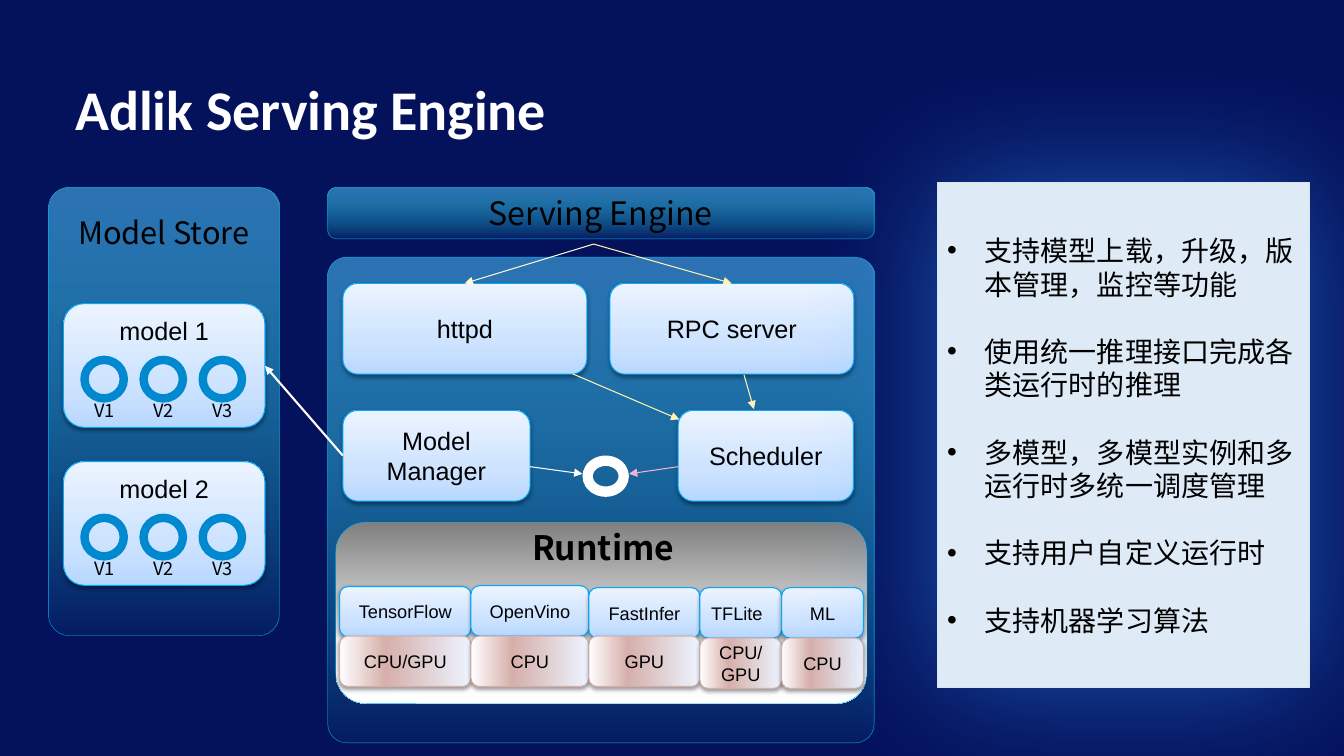
from lxml.etree import SubElement
from pptx import Presentation
from pptx.dml.color import RGBColor
from pptx.enum.shapes import MSO_CONNECTOR, MSO_SHAPE
from pptx.enum.text import MSO_ANCHOR, PP_ALIGN
from pptx.oxml.ns import qn
from pptx.util import Cm, Pt

NAVY = RGBColor(0x04, 0x11, 0x5B)
WHITE = RGBColor(0xFF, 0xFF, 0xFF)
BLACK = RGBColor(0x00, 0x00, 0x00)
GREY = RGBColor(0x80, 0x80, 0x80)
PALE_GREY = RGBColor(0xF2, 0xF2, 0xF2)
BLUE = RGBColor(0x2E, 0x75, 0xB6)
CYAN = RGBColor(0x21, 0xDF, 0xE9)
EDGE_CYAN = RGBColor(0x00, 0xB0, 0xF0)
EDGE_BLUE = RGBColor(0x04, 0xA7, 0xFA)
RING_BLUE = RGBColor(0x00, 0x89, 0xCF)
SKY = RGBColor(0xB8, 0xD8, 0xFF)
LIGHT_SKY = RGBColor(0xCD, 0xE3, 0xFF)
ICE = RGBColor(0xEC, 0xF4, 0xFF)
ROSE = RGBColor(0xD6, 0xAF, 0xAA)
PANEL = RGBColor(0xDE, 0xEB, 0xF7)
PANEL_EDGE = RGBColor(0xDA, 0xE3, 0xF3)
GLOW = RGBColor(0x33, 0x97, 0xFF)
CREAM = RGBColor(0xFF, 0xF8, 0xD9)
YELLOW = RGBColor(0xFF, 0xF2, 0xB3)
PINK = RGBColor(0xF8, 0xB1, 0xD0)

# Gradient stops: position, colour, opacity in percent
FRAME = {"stops": [(0, BLUE, 100), (100, CYAN, 5)], "angle": 270,
         "edge": EDGE_CYAN, "weight": 0.25, "shadow": False}
CARD = {"stops": [(0, SKY, 100), (35, LIGHT_SKY, 100), (100, ICE, 100)], "angle": 90,
        "edge": EDGE_BLUE, "weight": 0.75, "shadow": True}
DEVICE = {"stops": [(0, WHITE, 100), (35, ROSE, 100), (100, ICE, 100)], "angle": 0,
          "edge": ROSE, "weight": 0.75, "shadow": True}
RUNTIME = {"stops": [(0, GREY, 100), (68, PALE_GREY, 100), (100, WHITE, 100)], "angle": 270,
           "edge": EDGE_CYAN, "weight": 0.25, "shadow": False}

HEADING = {"name": "Noto Sans CJK SC", "size": Pt(22)}
BAR_TITLE = {"name": "Noto Sans CJK SC", "size": Pt(23)}
RUNTIME_TITLE = {"name": "Noto Sans CJK SC", "size": Pt(24), "bold": True}
VERSION = {"name": "Noto Sans CJK SC", "size": Pt(13)}
BULLET = {"name": "Noto Sans CJK SC", "size": Pt(20)}
LABEL = {"name": "Arial", "size": Pt(18)}
SMALL = {"name": "Arial", "size": Pt(13)}
TITLE = {"name": "Calibri", "size": Pt(40), "bold": True}

presentation = Presentation()
presentation.slide_width, presentation.slide_height = Cm(33.87), Cm(19.05)
slide = presentation.slides.add_slide(presentation.slide_layouts[6])
slide.background.fill.solid()
slide.background.fill.fore_color.rgb = NAVY


def write(shape, lines, font_format, align=PP_ALIGN.CENTER, color=BLACK,
          anchor=MSO_ANCHOR.MIDDLE, margins=(0.13, 0, 0.13, 0)):
    frame = shape.text_frame
    sides = ("margin_left", "margin_top", "margin_right", "margin_bottom")
    for side, margin in zip(sides, margins):
        setattr(frame, side, Cm(margin))
    frame.word_wrap = True
    frame.vertical_anchor = anchor
    for index, line in enumerate(lines):
        paragraph = frame.add_paragraph() if index else frame.paragraphs[0]
        paragraph.alignment = align
        run = paragraph.add_run()
        run.text = line
        run.font.color.rgb = color
        for name, value in font_format.items():
            setattr(run.font, name, value)
        SubElement(run.font._element, qn("a:ea"), typeface=font_format["name"])


def add_box(left, top, width, height, look, corner=0.167):
    shape = slide.shapes.add_shape(MSO_SHAPE.ROUNDED_RECTANGLE,
                                   Cm(left), Cm(top), Cm(width), Cm(height))
    shape.adjustments[0] = corner
    shape.fill.gradient()
    shape.fill.gradient_angle = look["angle"]
    stop_list = shape.element.spPr.find(".//" + qn("a:gsLst"))
    for stop in list(stop_list):
        stop_list.remove(stop)
    for position, color, opacity in look["stops"]:
        stop = SubElement(stop_list, qn("a:gs"), pos=str(position * 1000))
        rgb = SubElement(stop, qn("a:srgbClr"), val=str(color))
        SubElement(rgb, qn("a:alpha"), val=str(opacity * 1000))
    shape.line.color.rgb = look["edge"]
    shape.line.width = Pt(look["weight"])
    shape.shadow.inherit = False
    if look["shadow"]:
        effects = shape.element.spPr.find(qn("a:effectLst"))
        shadow = SubElement(effects, qn("a:outerShdw"), blurRad=str(Pt(3)),
                            dist=str(Pt(1.6)), dir="5400000", rotWithShape="0")
        rgb = SubElement(shadow, qn("a:srgbClr"), val=str(BLACK))
        SubElement(rgb, qn("a:alpha"), val="38000")
    return shape


# Title
title = slide.shapes.add_textbox(Cm(1.65), Cm(1.75), Cm(28.75), Cm(1.96))
write(title, ["Adlik Serving Engine"], TITLE, PP_ALIGN.LEFT, WHITE,
      MSO_ANCHOR.TOP, (0.25, 0.13, 0.25, 0.13))

# Model store, engine body and engine bar
store = add_box(1.22, 4.72, 5.82, 11.3, FRAME, 0.091)
write(store, ["Model Store"], HEADING, anchor=MSO_ANCHOR.TOP, margins=(0.13, 0.51, 0.13, 0))
add_box(8.26, 6.48, 13.77, 12.24, FRAME, 0.039)
write(add_box(8.26, 4.72, 13.77, 1.3, FRAME), ["Serving Engine"], BAR_TITLE)

# Engine components
for text, left, top, width in [("httpd", 8.64, 7.14, 6.15), ("RPC server", 15.37, 7.14, 6.15),
                               ("Model Manager", 8.64, 10.34, 4.72),
                               ("Scheduler", 17.09, 10.34, 4.42)]:
    write(add_box(left, top, width, 2.29, CARD), [text], LABEL, margins=(0.3, 0, 0.3, 0))

# Runtime block: each backend above the devices it runs on
add_box(8.46, 13.16, 13.39, 4.57, RUNTIME)
runtime_title = slide.shapes.add_textbox(Cm(13.28), Cm(13.16), Cm(4.34), Cm(1.4))
write(runtime_title, ["Runtime"], RUNTIME_TITLE, PP_ALIGN.LEFT,
      anchor=MSO_ANCHOR.TOP, margins=(0.13, 0.13, 0.13, 0.13))
left = 8.56
for backend, devices, width, top, device_top, right_margin in [
        ("TensorFlow", ["CPU/GPU"], 3.31, 14.78, 16.03, 0.13),
        ("OpenVino", ["CPU"], 2.97, 14.76, 16.03, 0.13),
        ("FastInfer", ["GPU"], 2.8, 14.81, 16.03, 0.13),
        ("TFLite", ["CPU/", "GPU"], 2.06, 14.81, 16.08, 0.33),
        ("ML", ["CPU"], 2.06, 14.81, 16.08, 0.13)]:
    write(add_box(left, top, width, 1.27, CARD), [backend], SMALL,
          margins=(0.13, 0, right_margin, 0))
    write(add_box(left, device_top, width, 1.27, DEVICE), devices, SMALL)
    left += width

# Models with their versions
for model in range(2):
    top = 7.65 + model * 3.98
    write(add_box(1.6, top, 5.08, 3.12, CARD), [f"model {model + 1}"], LABEL,
          anchor=MSO_ANCHOR.TOP, margins=(0.13, 0.15, 0.13, 0))
    for version in range(3):
        shift = version * 1.49
        ring = slide.shapes.add_shape(MSO_SHAPE.OVAL, Cm(2.13 + shift), Cm(top + 1.42),
                                      Cm(0.99), Cm(0.97))
        ring.fill.background()
        ring.line.color.rgb = RING_BLUE
        ring.line.width = Pt(6)
        ring.shadow.inherit = False
        label = slide.shapes.add_textbox(Cm(2.24 + shift), Cm(top + 2.29), Cm(0.91), Cm(0.89))
        write(label, [f"V{version + 1}"], VERSION, PP_ALIGN.LEFT,
              anchor=MSO_ANCHOR.TOP, margins=(0.13, 0.13, 0.13, 0.13))

# Shared ring between manager and scheduler
hub = slide.shapes.add_shape(MSO_SHAPE.DONUT, Cm(14.68), Cm(11.48), Cm(1.17), Cm(1.04))
hub.adjustments[0] = 0.25
hub.fill.solid()
hub.fill.fore_color.rgb = WHITE
hub.line.fill.background()
hub.shadow.inherit = False

# Arrows
for x1, y1, x2, y2, color, weight in [
        (8.64, 11.48, 6.68, 9.22, WHITE, 1.5), (14.96, 6.15, 11.71, 7.14, CREAM, 0.75),
        (14.96, 6.15, 18.44, 7.14, YELLOW, 0.75), (14.43, 9.42, 17.12, 10.57, YELLOW, 0.75),
        (18.75, 9.45, 19, 10.31, YELLOW, 0.75), (13.36, 11.76, 14.68, 11.94, WHITE, 0.75),
        (17.09, 11.76, 15.85, 11.94, PINK, 0.75)]:
    arrow = slide.shapes.add_connector(MSO_CONNECTOR.STRAIGHT, Cm(x1), Cm(y1), Cm(x2), Cm(y2))
    arrow.line.color.rgb = color
    arrow.line.width = Pt(weight)
    SubElement(arrow.line._get_or_add_ln(), qn("a:tailEnd"), type="triangle")
    SubElement(arrow.element.spPr, qn("a:effectLst"))

# Feature panel with glow
panel = slide.shapes.add_shape(MSO_SHAPE.RECTANGLE, Cm(23.62), Cm(4.6), Cm(9.37), Cm(12.73))
panel.fill.solid()
panel.fill.fore_color.rgb = PANEL
panel.line.color.rgb = PANEL_EDGE
panel.line.width = Pt(0.5)
panel.shadow.inherit = False
glow = SubElement(panel.element.spPr.find(qn("a:effectLst")), qn("a:outerShdw"),
                  blurRad=str(Pt(100)), dist="0", dir="0", algn="ctr", rotWithShape="0")
glow_color = SubElement(glow, qn("a:srgbClr"), val=str(GLOW))
SubElement(glow_color, qn("a:alpha"), val="50000")
features = ["支持模型上载，升级，版本管理，监控等功能", "使用统一推理接口完成各类运行时的推理",
            "多模型，多模型实例和多运行时多统一调度管理", "支持用户自定义运行时", "支持机器学习算法"]
write(panel, features, BULLET, PP_ALIGN.LEFT, margins=(0.25, 0.13, 0.25, 0.13))
for index, paragraph in enumerate(panel.text_frame.paragraphs):
    paragraph.line_spacing = Pt(24)
    paragraph.space_before = Pt(24 if index else 0)
    properties = paragraph._p.get_or_add_pPr()
    properties.set("marL", str(Cm(0.95)))
    properties.set("indent", str(-Cm(0.95)))
    SubElement(properties, qn("a:buFont"), typeface="Arial")
    SubElement(properties, qn("a:buChar"), char="•")

presentation.save("out.pptx")
